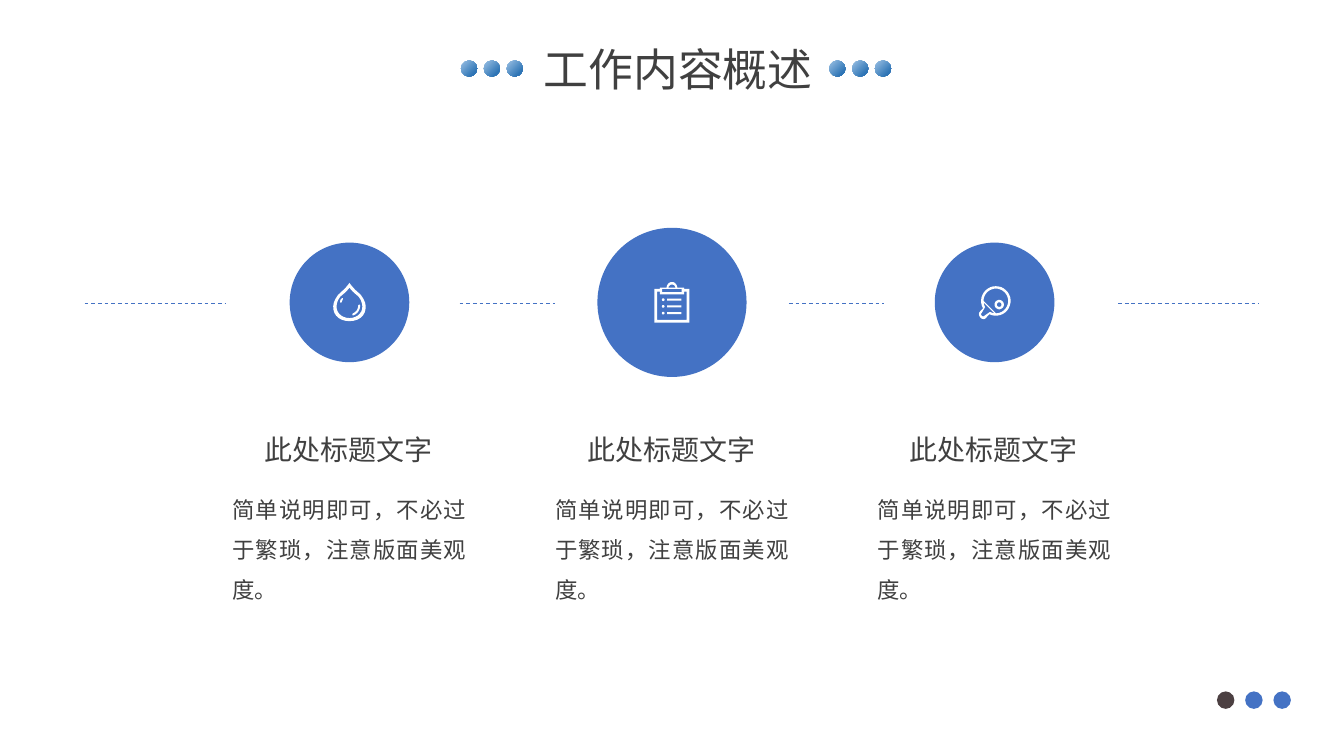
import math
from lxml import etree
from pptx import Presentation
from pptx import util as u
from pptx.dml.color import RGBColor
from pptx.enum import dml, shapes, text
from pptx.oxml.ns import qn

W = 10
H = W * 9 / 16
FONT = "Noto Sans CJK SC"
COLORS = {"blue": "4472C4", "text": "404040", "white": "FFFFFF",
          "dark": "4C4042", "light": "9DC3E6", "deep": "2E75B6"}

TITLE = "工作内容概述"
BODY = "简单说明即可，不必过于繁琐，注意版面美观度。"
COLUMNS = [
    {"heading": "此处标题文字", "body": BODY, "disc": 0.89, "icon": "drop"},
    {"heading": "此处标题文字", "body": BODY, "disc": 1.11, "icon": "clipboard"},
    {"heading": "此处标题文字", "body": BODY, "disc": 0.89, "icon": "paddle"},
]
PITCH, ROW = 0.24 * W, 2.25
DASHES = [(0.63, 1.68), (3.42, 4.13), (5.87, 6.58), (8.32, 9.37)]
TITLE_DOTS = [3.43, 6.17]
PAGE_DOTS = ["dark", "blue", "blue"]


def curve(*points, steps=10):
    result = [points[0]]
    for i in range(0, len(points) - 1, 3):
        for k in range(1, steps + 1):
            t = k / steps
            weights = ((1 - t) ** 3, 3 * t * (1 - t) ** 2, 3 * t * t * (1 - t), t ** 3)
            result.append(tuple(sum(f * p[axis] for f, p in zip(weights, points[i:i + 4]))
                                for axis in (0, 1)))
    return result


def arc(cx, cy, r, start=0, end=360, steps=30):
    angles = [math.radians(start + (end - start) * k / steps) for k in range(steps + 1)]
    return [(cx + r * math.cos(a), cy + r * math.sin(a)) for a in angles]


def bar(x, y, w, h):
    return [(x, y), (x + w, y), (x + w, y + h), (x, y + h)]


ICONS = {
    "drop": [
        curve((0, -14.5), (3, -10), (6, -8), (8.5, -5.5), (16, 4), (11, 14), (0, 14),
              (-11, 14), (-16, 4), (-8.5, -5.5), (-6, -8), (-3, -10), (0, -14.5)),
        curve((0, -11), (2.5, -7.5), (5, -6), (7, -4), (13, 4), (8, 11.7), (0, 11.7),
              (-8, 11.7), (-13, 4), (-7, -4), (-5, -6), (-2.5, -7.5), (0, -11)),
        curve((8, 2), (8, 6), (5.5, 9), (2.5, 9.8), (2, 9), (2, 8.5), (3, 8),
              (5, 7), (6.5, 5), (6.5, 2.5), (7, 1.5), (7.5, 1.5), (8, 2)),
        curve((-7, 0), (-7, -2), (-6, -3), (-5, -3.2), (-4.5, -2.5),
              (-5.5, -1.5), (-5.8, 0), (-6, 0.3), (-6.7, 0.3), (-7, 0)),
    ],
    "clipboard": [
        [(-13, -10), (-9, -10), (-9, -11),
         *curve((-4, -11), (-3.5, -16.5), (3.5, -16.5), (4, -11)),
         (9, -11), (9, -10), (13, -10), (13, 15), (-13, 15)],
        [(-11, -8), (-9, -8), (-9, -6), (9, -6), (9, -8), (11, -8), (11, 13), (-11, 13)],
        bar(-7.3, -10, 14.6, 2.3),
        curve((-2.7, -11), (-2, -14), (2, -14), (2.7, -11)),
        *[arc(-6.5, y, 1) for y in (-2, 3, 8)],
        *[bar(-3.5, y - 0.7, 10.5, 1.4) for y in (-2, 3, 8)],
    ],
    "paddle": [
        arc(1, -1, 11, 116, -210)
        + curve((-10.5, 6.5), (-14, 9.5), (-8.5, 15), (-6, 11.2)),
        arc(1, -1, 9.2, 90, -180),
        arc(1, -1, 9.2, 97, 118)
        + curve((-7.5, 10), (-9, 11.5), (-11, 9), (-9.5, 7.8))
        + arc(1, -1, 9.2, 150, 173),
        arc(3.5, 1.7, 3.5),
        arc(3.5, 1.7, 1.7),
    ],
}

prs = Presentation()
prs.slide_width, prs.slide_height = u.Inches(W), u.Inches(H)
s = prs.slides.add_slide(prs.slide_layouts[6])


def rgb(name):
    return RGBColor.from_string(COLORS[name])


def paint(sp, color):
    sp.shadow.inherit = False
    sp.fill.solid()
    sp.fill.fore_color.rgb = rgb(color)
    sp.line.fill.background()


def circle(cx, cy, d, color):
    sp = s.shapes.add_shape(shapes.MSO_SHAPE.OVAL,
                            *map(u.Inches, (cx - d / 2, cy - d / 2, d, d)))
    paint(sp, color)
    return sp


def draw_icon(contours, cx, cy):
    placed = [[(round(cx * 1000 + x * 10), round(cy * 1000 + y * 10)) for x, y in c]
              for c in contours]
    fb = s.shapes.build_freeform(*placed[0][0], scale=u.Inches(1) / 1000)
    fb.add_line_segments(placed[0][1:], close=True)
    for contour in placed[1:]:
        fb.move_to(*contour[0])
        fb.add_line_segments(contour[1:], close=True)
    paint(fb.convert_to_shape(), "white")


def label(content, x, y, w, h, size, align, wrap=True, inset=0, spacing=None):
    tf = s.shapes.add_textbox(*map(u.Inches, (x, y, w, h))).text_frame
    tf.word_wrap = wrap
    tf.auto_size = text.MSO_AUTO_SIZE.SHAPE_TO_FIT_TEXT
    tf.margin_left = tf.margin_right = u.Inches(inset)
    tf.margin_top = tf.margin_bottom = u.Inches(inset / 2)
    p = tf.paragraphs[0]
    p.text, p.alignment = content, align
    if spacing:
        p.line_spacing = spacing
    p.font.name, p.font.size = FONT, u.Pt(size)
    p.font.color.rgb = rgb("text")
    rpr = p.runs[0]._r.get_or_add_rPr()
    etree.SubElement(rpr, qn("a:ea"), typeface=FONT)


for i, col in enumerate(COLUMNS):
    cx = W / 2 + (i - 1) * PITCH
    circle(cx, ROW, col["disc"], "blue")
    draw_icon(ICONS[col["icon"]], cx, ROW)
    label(col["heading"], cx - 0.63, 3.22, 1.26, 0.25, 15,
          text.PP_ALIGN.JUSTIFY, wrap=False)
    label(col["body"], cx - 0.87, 3.59, 1.74, 0.91, 12,
          text.PP_ALIGN.JUSTIFY, spacing=1.5)

for x1, x2 in DASHES:
    c = s.shapes.add_connector(shapes.MSO_CONNECTOR.STRAIGHT,
                               *map(u.Inches, (x1, 2.26, x2, 2.26)))
    c.line.color.rgb = rgb("blue")
    c.line.width = u.Pt(0.5)
    c.line.dash_style = dml.MSO_LINE.DASH
    etree.SubElement(c._element.spPr, qn("a:effectLst"))

label(TITLE, 2, 0.26, 6.09, 0.5, 24, text.PP_ALIGN.CENTER, inset=0.1)
for left in TITLE_DOTS:
    for i in range(3):
        fill = circle(left + 0.06 + i * 0.17, 0.51, 0.12, "deep").fill
        fill.gradient()
        fill.gradient_angle = 315
        for stop, (pos, name) in zip(fill.gradient_stops, [(0, "light"), (0.81, "deep")]):
            stop.position, stop.color.rgb = pos, rgb(name)

for i, name in enumerate(PAGE_DOTS):
    circle(9.12 + i * 0.21, 5.21, 0.13, name)

prs.save("out.pptx")
